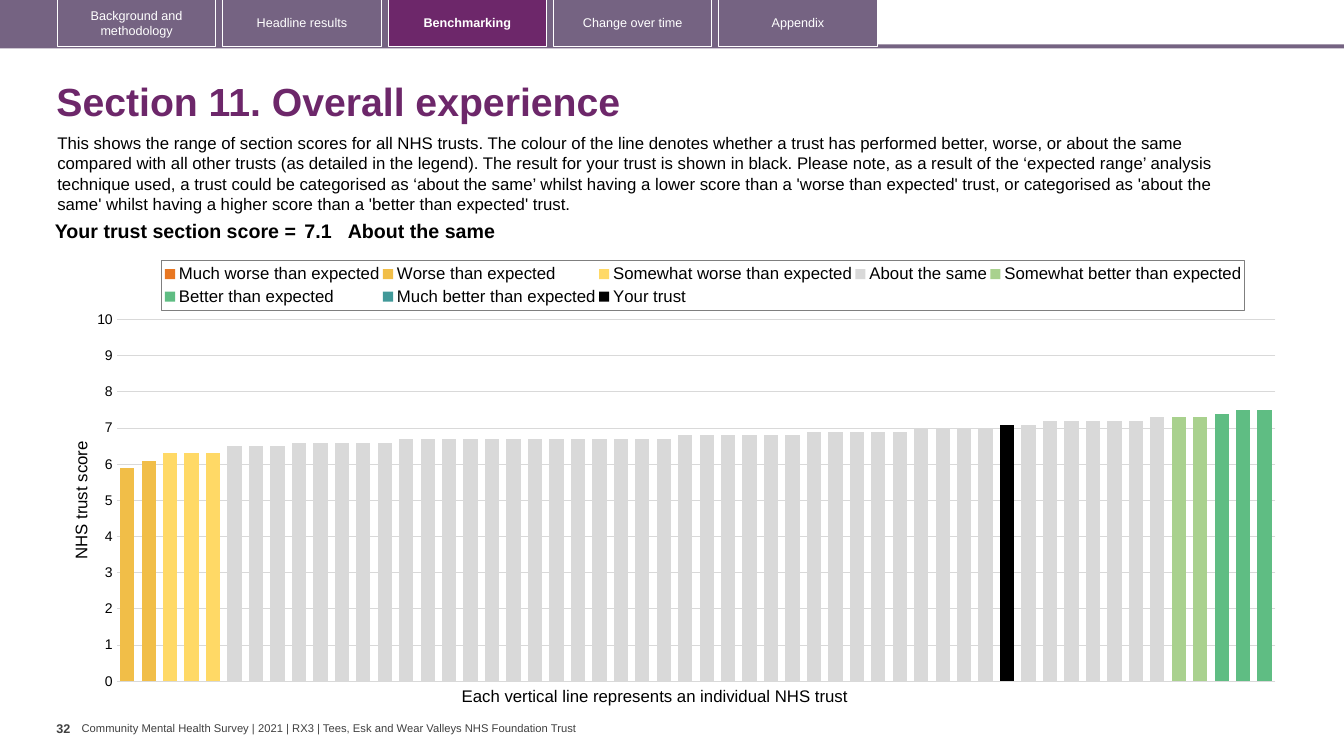
from copy import deepcopy

from lxml import etree
from pptx import Presentation
from pptx.chart.data import CategoryChartData
from pptx.dml.color import RGBColor
from pptx.enum import chart as ch, shapes, text
from pptx.oxml import parse_xml
from pptx.oxml.ns import nsdecls, qn
from pptx.util import Inches, Pt

PURPLE = RGBColor(0x6D, 0x27, 0x6A)
MAUVE = RGBColor(0x75, 0x63, 0x82)
WHITE = RGBColor(0xFF, 0xFF, 0xFF)
BLACK = RGBColor(0, 0, 0)
DARK = RGBColor(0x40, 0x40, 0x40)
GRID = RGBColor(0xD9, 0xD9, 0xD9)

TABS = ["Background and methodology", "Headline results", "Benchmarking",
        "Change over time", "Appendix"]
CURRENT_TAB = "Benchmarking"
INTRO = (
    "This shows the range of section scores for all NHS trusts. The colour of the line "
    "denotes whether a trust has performed better, worse, or about the same compared with "
    "all other trusts (as detailed in the legend). The result for your trust is shown in "
    "black. Please note, as a result of the ‘expected range’ analysis technique used, a "
    "trust could be categorised as ‘about the same’ whilst having a lower score than a "
    "'worse than expected' trust, or categorised as 'about the same' whilst having a higher "
    "score than a 'better than expected' trust.")

TRUSTS = 54
ABOUT_THE_SAME = ([6.5] * 3 + [6.6] * 5 + [6.7] * 13 + [6.8] * 6 + [6.9] * 5
                  + [7] * 4 + [7.1] * 2 + [7.2] * 5 + [7.3])
BANDS = [
    ("Much worse than expected", RGBColor(0xE8, 0x77, 0x22), 0, []),
    ("Worse than expected", RGBColor(0xF1, 0xBE, 0x48), 0, [5.9, 6.1]),
    ("Somewhat worse than expected", RGBColor(0xFF, 0xD9, 0x66), 2, [6.3] * 3),
    ("About the same", GRID, 5, ABOUT_THE_SAME),
    ("Somewhat better than expected", RGBColor(0xA9, 0xD1, 0x8E), 49, [7.3] * 2),
    ("Better than expected", RGBColor(0x5F, 0xBD, 0x83), 51, [7.4, 7.5, 7.5]),
    ("Much better than expected", RGBColor(0x41, 0x99, 0x99), 0, []),
    ("Your trust", BLACK, 41, [7.1]),
]


def set_font(font, size, color=BLACK, bold=False):
    font.name = "Arial"
    font.size = Pt(size)
    font.bold = bold
    font.color.rgb = color


def add_text(s, box, content, size, color=BLACK, bold=False, margins=(0.1, 0.05),
             anchor=text.MSO_ANCHOR.TOP):
    tf = s.shapes.add_textbox(*map(Inches, box)).text_frame
    tf.word_wrap = True
    tf.vertical_anchor = anchor
    tf.margin_left = tf.margin_right = Inches(margins[0])
    tf.margin_top = tf.margin_bottom = Inches(margins[1])
    tf.text = content
    set_font(tf.paragraphs[0].font, size, color, bold)


def add_rect(s, box, fill=None):
    sp = s.shapes.add_shape(shapes.MSO_SHAPE.RECTANGLE, *map(Inches, box))
    sp.shadow.inherit = False
    if fill is None:
        sp.fill.background()
    else:
        sp.fill.solid()
        sp.fill.fore_color.rgb = fill
    sp.line.fill.background()
    return sp


def add_tab(s, left, label):
    current = label == CURRENT_TAB
    sp = add_rect(s, (left, -0.01, 1.57, 0.47), PURPLE if current else None)
    sp.line.color.rgb = WHITE
    sp.line.width = Pt(0.75)
    tf = sp.text_frame
    tf.word_wrap = True
    tf.vertical_anchor = text.MSO_ANCHOR.MIDDLE
    tf.text = label
    p = tf.paragraphs[0]
    p.alignment = text.PP_ALIGN.CENTER
    set_font(p.font, 9, WHITE, current)


def set_title(s, content):
    title = s.shapes.title
    title.left, title.top = Inches(0.46), Inches(0.67)
    title.width, title.height = Inches(12.49), Inches(0.72)
    tf = title.text_frame
    tf.vertical_anchor = text.MSO_ANCHOR.MIDDLE
    tf.text = content
    p = tf.paragraphs[0]
    p.alignment = text.PP_ALIGN.LEFT
    p.line_spacing = 0.9
    set_font(p.font, 28, PURPLE, True)


def add_score_table(s):
    box = map(Inches, (0.35, 2.15, 11.69, 0.31))
    table = s.shapes.add_table(1, 3, *box).table
    table.first_row = table.horz_banding = False
    columns = [("Your trust section score =", 2.63, 0.04, text.PP_ALIGN.RIGHT),
               ("7.1", 0.47, 0.04, text.PP_ALIGN.LEFT),
               ("About the same", 8.59, 0, text.PP_ALIGN.LEFT)]
    for i, (content, width, margin, align) in enumerate(columns):
        table.columns[i].width = Inches(width)
        cell = table.cell(0, i)
        cell.fill.background()
        cell.margin_left = cell.margin_right = Inches(margin)
        cell.margin_top = cell.margin_bottom = Inches(0.04)
        cell.text = content
        p = cell.text_frame.paragraphs[0]
        p.alignment = align
        set_font(p.font, 14, bold=True)


def layout_xml(x, y, w, h, inner=False):
    target = '<c:layoutTarget val="inner"/>' if inner else ""
    return parse_xml(
        f'<c:layout {nsdecls("c")}><c:manualLayout>{target}'
        '<c:xMode val="edge"/><c:yMode val="edge"/>'
        f'<c:x val="{x}"/><c:y val="{y}"/><c:w val="{w}"/><c:h val="{h}"/>'
        '</c:manualLayout></c:layout>')


def move_last_series_to_right_axis(chart):
    area = chart.plots[0]._element.getparent()
    bars = area.find(qn("c:barChart"))
    right_bars = deepcopy(bars)
    bars.remove(bars.findall(qn("c:ser"))[-1])
    for ser in right_bars.findall(qn("c:ser"))[:-1]:
        right_bars.remove(ser)
    bars.addnext(right_bars)
    new_ids = {}
    for i, ax_id in enumerate(right_bars.findall(qn("c:axId"))):
        new_ids[ax_id.get("val")] = str(5001 + i)
        ax_id.set("val", str(5001 + i))
    val_ax = area.find(qn("c:valAx"))
    right_axes = [deepcopy(val_ax), deepcopy(area.find(qn("c:catAx")))]
    for axis in right_axes:
        for tag in ("c:axId", "c:crossAx"):
            el = axis.find(qn(tag))
            el.set("val", new_ids[el.get("val")])
    right = right_axes[0]
    right.find(qn("c:axPos")).set("val", "r")
    right.find(qn("c:tickLblPos")).set("val", "none")
    right.find(qn("c:crosses")).set("val", "max")
    for axis in reversed(right_axes):
        val_ax.addnext(axis)


def style_legend(chart):
    chart.has_legend = True
    legend = chart.legend
    legend.position = ch.XL_LEGEND_POSITION.TOP
    legend.include_in_layout = False
    set_font(legend.font, 12)
    el = legend._element
    for old in el.findall(qn("c:layout")):
        el.remove(old)
    el.find(qn("c:legendPos")).addnext(layout_xml(0.077, 0.026, 0.884, 0.111))
    el.find(qn("c:txPr")).addprevious(parse_xml(
        f'<c:spPr {nsdecls("c", "a")}><a:ln w="9525"><a:solidFill>'
        '<a:srgbClr val="7F7F7F"/></a:solidFill></a:ln></c:spPr>'))


def add_score_chart(s):
    data = CategoryChartData()
    data.categories = [str(n + 1) for n in range(TRUSTS)]
    for name, _, start, scores in BANDS:
        data.add_series(name, [None] * start + scores
                        + [None] * (TRUSTS - start - len(scores)))
    box = map(Inches, (0.67, 2.47, 12.15, 4.44))
    chart = s.shapes.add_chart(ch.XL_CHART_TYPE.COLUMN_CLUSTERED, *box, data).chart
    set_font(chart.font, 10)
    chart.has_title = False
    plot = chart.plots[0]
    plot.gap_width, plot.overlap, plot.vary_by_categories = 50, 100, False
    for series, (_, color, _, _) in zip(plot.series, BANDS):
        series.format.fill.solid()
        series.format.fill.fore_color.rgb = color
    chart.category_axis.visible = False
    axis = chart.value_axis
    axis.minimum_scale, axis.maximum_scale, axis.major_unit = 0, 10, 1
    axis.major_tick_mark = ch.XL_TICK_MARK.NONE
    axis.format.line.fill.background()
    axis.tick_labels.number_format = "0"
    axis.tick_labels.number_format_is_linked = False
    set_font(axis.tick_labels.font, 10)
    axis.has_major_gridlines = False
    move_last_series_to_right_axis(chart)
    axis.has_major_gridlines = True
    axis.major_gridlines.format.line.color.rgb = GRID
    axis.major_gridlines.format.line.width = Pt(0.75)
    tf = axis.axis_title.text_frame
    tf.text = "NHS trust score"
    set_font(tf.paragraphs[0].font, 12)
    area = plot._element.getparent()
    for old in area.findall(qn("c:layout")):
        area.remove(old)
    area.insert(0, layout_xml(0.04, 0.158, 0.946, 0.808, inner=True))
    style_legend(chart)


def main():
    prs = Presentation()
    prs.slide_width, prs.slide_height = Inches(13.33), Inches(7.5)
    s = prs.slides.add_slide(prs.slide_layouts[5])
    add_rect(s, (-0.03, 0.44, 13.36, 0.04), MAUVE)
    add_rect(s, (-0.03, 0, 8.73, 0.47), MAUVE)
    for i, label in enumerate(TABS):
        add_tab(s, 0.57 + 1.64 * i, label)
    set_title(s, "Section 11. Overall experience")
    add_text(s, (0.47, 1.27, 12.13, 0.91), INTRO, 12)
    add_score_table(s)
    add_score_chart(s)
    add_text(s, (4.48, 6.75, 4.11, 0.3),
             "Each vertical line represents an individual NHS trust", 12)
    add_text(s, (0.56, 7.1, 0.25, 0.4), "32", 9, DARK, True, (0, 0.05))
    add_text(s, (0.81, 7.16, 5, 0.13),
             "Community Mental Health Survey | 2021 | RX3 | "
             "Tees, Esk and Wear Valleys NHS Foundation Trust",
             8, DARK, margins=(0, 0), anchor=text.MSO_ANCHOR.MIDDLE)
    prs.save("out.pptx")


if __name__ == "__main__":
    main()
